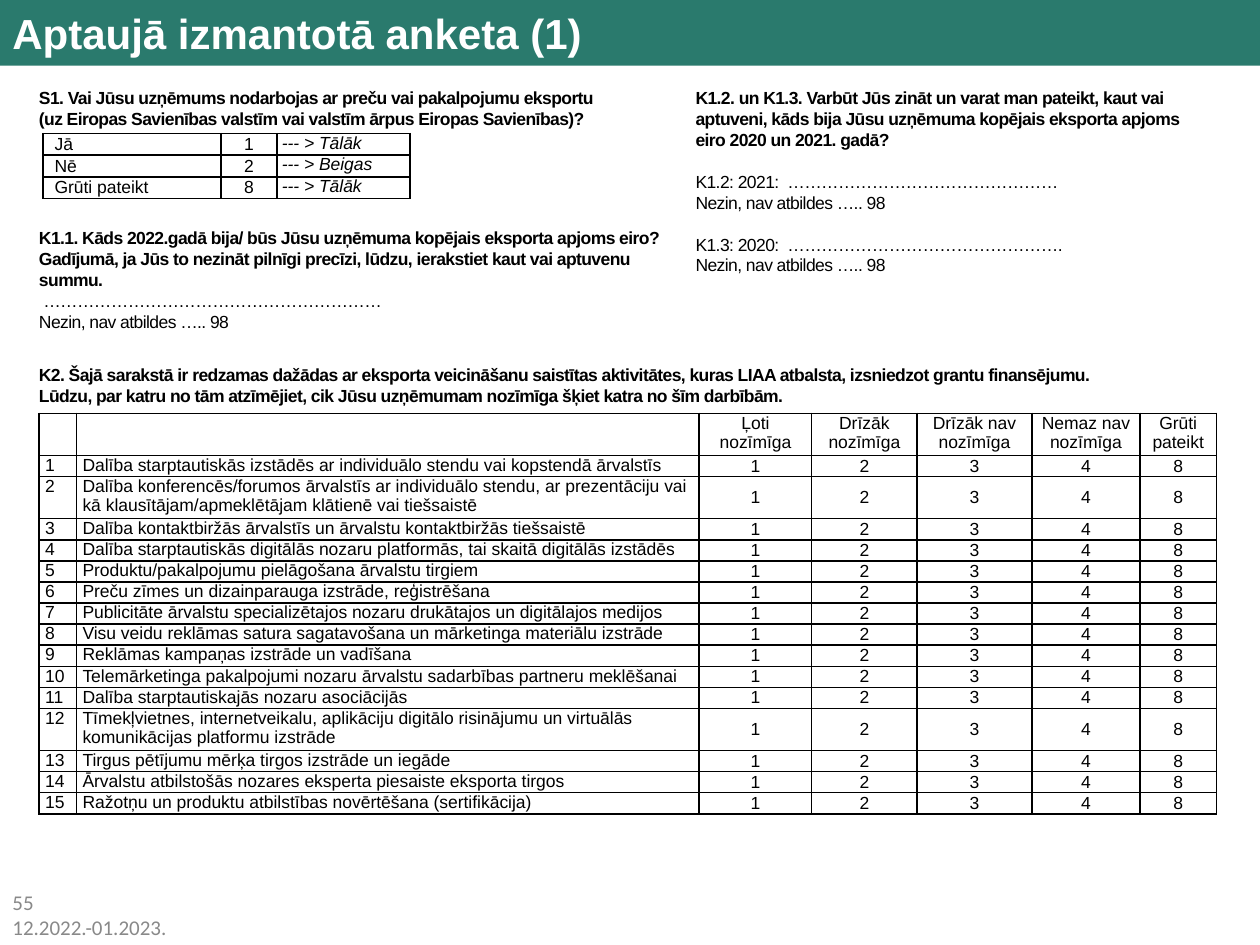
import pptx
import pptx.dml.color
import pptx.enum.shapes
import pptx.enum.text
import pptx.oxml
import pptx.oxml.ns
import pptx.util

Pt = pptx.util.Pt
ALIGN = pptx.enum.text.PP_ALIGN
ANCHOR = pptx.enum.text.MSO_ANCHOR
BLACK, WHITE, GREEN, GREY = "000000", "FFFFFF", "2A7A6D", "898989"

SCREENING = [
    ("Jā", "1", " --- > Tālāk"),
    ("Nē", "2", " --- > Beigas"),
    ("Grūti pateikt", "8", " --- > Tālāk"),
]
RATINGS = [
    ("Ļoti nozīmīga", "1"),
    ("Drīzāk nozīmīga", "2"),
    ("Drīzāk nav nozīmīga", "3"),
    ("Nemaz nav nozīmīga", "4"),
    ("Grūti pateikt", "8"),
]
ACTIVITIES = [
    "Dalība starptautiskās izstādēs ar individuālo stendu vai kopstendā ārvalstīs",
    "Dalība konferencēs/forumos ārvalstīs ar individuālo stendu, ar prezentāciju vai "
    "kā klausītājam/apmeklētājam klātienē vai tiešsaistē",
    "Dalība kontaktbiržās ārvalstīs un ārvalstu kontaktbiržās tiešsaistē",
    "Dalība starptautiskās digitālās nozaru platformās, tai skaitā digitālās izstādēs",
    "Produktu/pakalpojumu pielāgošana ārvalstu tirgiem",
    "Preču zīmes un dizainparauga izstrāde, reģistrēšana",
    "Publicitāte ārvalstu specializētajos nozaru drukātajos un digitālajos medijos",
    "Visu veidu reklāmas satura sagatavošana un mārketinga materiālu izstrāde",
    "Reklāmas kampaņas izstrāde un vadīšana",
    "Telemārketinga pakalpojumi nozaru ārvalstu sadarbības partneru meklēšanai",
    "Dalība starptautiskajās nozaru asociācijās",
    "Tīmekļvietnes, internetveikalu, aplikāciju digitālo risinājumu un virtuālās "
    "komunikācijas platformu izstrāde",
    "Tirgus pētījumu mērķa tirgos izstrāde un iegāde",
    "Ārvalstu atbilstošās nozares eksperta piesaiste eksporta tirgos",
    "Ražotņu un produktu atbilstības novērtēšana (sertifikācija)",
]
LINE_HEIGHT = 12
TWO_LINE_ROWS = (0, 2, 12)
NO_ANSWER = "Nezin, nav atbildes ….. 98"


def rgb(color):
    return pptx.dml.color.RGBColor.from_string(color)


def add_run(p, text, size=10, color=BLACK, bold=False, italic=False, font="Arial"):
    r = p.add_run()
    r.text = text
    r.font.size = Pt(size)
    r.font.name = font
    r.font.bold = bold
    r.font.italic = italic
    r.font.color.rgb = rgb(color)
    return r


def add_text_box(slide, left, top, width, height):
    tf = slide.shapes.add_textbox(Pt(left), Pt(top), Pt(width), Pt(height)).text_frame
    tf.word_wrap = True
    return tf


def add_question(slide, left, top, width, height, paragraphs):
    tf = add_text_box(slide, left, top, width, height)
    for i, (text, bold, gap) in enumerate(paragraphs):
        p = tf.add_paragraph() if i else tf.paragraphs[0]
        p.line_spacing = Pt(LINE_HEIGHT)
        p.space_before = Pt(gap)
        r = add_run(p, text, bold=bold)
        r.font._element.set("spc", "-30")


def add_title(slide, text):
    sp = slide.shapes.add_shape(
        pptx.enum.shapes.MSO_SHAPE.RECTANGLE, 0, 0, Pt(720), Pt(37.5))
    sp.shadow.inherit = False
    sp.fill.solid()
    sp.fill.fore_color.rgb = rgb(GREEN)
    sp.line.fill.background()
    tf = sp.text_frame
    tf.word_wrap = True
    tf.vertical_anchor = ANCHOR.MIDDLE
    p = tf.paragraphs[0]
    p.alignment = ALIGN.LEFT
    add_run(p, text, 24, WHITE, bold=True)


def add_footer(slide, lines):
    tf = add_text_box(slide, 0, 504.7, 106.6, 35.3)
    for i, text in enumerate(lines):
        p = tf.add_paragraph() if i else tf.paragraphs[0]
        add_run(p, text, 12, GREY, font="Calibri")


def add_grid(slide, left, top, widths, heights):
    frame = slide.shapes.add_table(
        len(heights), len(widths), Pt(left), Pt(top), Pt(sum(widths)), Pt(sum(heights)))
    table = frame.table
    table.first_row = table.horz_banding = False
    for column, width in zip(table.columns, widths):
        column.width = Pt(width)
    for row, height in zip(table.rows, heights):
        row.height = Pt(height)
    return table


def fill_cell(cell, text, margin=3.6, center=False, middle=False, italic=False):
    cell.margin_left = cell.margin_right = Pt(margin)
    cell.margin_top = cell.margin_bottom = 0
    cell.vertical_anchor = ANCHOR.MIDDLE if middle else ANCHOR.TOP
    tc_pr = cell._tc.get_or_add_tcPr()
    for side in ("lnL", "lnR", "lnT", "lnB"):
        tc_pr.append(pptx.oxml.parse_xml(
            f'<a:{side} {pptx.oxml.ns.nsdecls("a")} w="{Pt(1)}"><a:solidFill>'
            f'<a:srgbClr val="{BLACK}"/></a:solidFill></a:{side}>'))
    cell.fill.background()
    p = cell.text_frame.paragraphs[0]
    p.alignment = ALIGN.CENTER if center else ALIGN.LEFT
    if text:
        add_run(p, text, italic=italic)


def add_screening_table(slide):
    table = add_grid(slide, 24.7, 76.3, [101.7, 31.9, 76.1], [12.4] * len(SCREENING))
    for i, (answer, code, route) in enumerate(SCREENING):
        fill_cell(table.cell(i, 0), answer, margin=6.5, middle=True)
        fill_cell(table.cell(i, 1), code, margin=0, center=True, middle=True)
        fill_cell(table.cell(i, 2), route, margin=0, italic=True)


def add_rating_table(slide):
    heights = [LINE_HEIGHT * (2 if i in TWO_LINE_ROWS else 1)
               for i in range(len(ACTIVITIES) + 1)]
    widths = [21.4, 356, 64.3, 60.2, 65.6, 61.8, 43.7]
    table = add_grid(slide, 22.2, 236.2, widths, heights)
    fill_cell(table.cell(0, 0), "")
    fill_cell(table.cell(0, 1), "")
    for j, (label, code) in enumerate(RATINGS, 2):
        fill_cell(table.cell(0, j), label, center=True)
        for i in range(1, len(heights)):
            fill_cell(table.cell(i, j), code, center=True, middle=True)
    for i, activity in enumerate(ACTIVITIES, 1):
        fill_cell(table.cell(i, 0), str(i))
        fill_cell(table.cell(i, 1), activity)


def main():
    prs = pptx.Presentation()
    prs.slide_width, prs.slide_height = Pt(720), Pt(540)
    slide = prs.slides.add_slide(prs.slide_layouts[6])
    add_footer(slide, ["55", "12.2022.-01.2023."])
    add_question(slide, 15.2, 46, 338, 31.5, [
        ("S1. Vai Jūsu uzņēmums nodarbojas ar preču vai pakalpojumu eksportu "
         "(uz Eiropas Savienības valstīm vai valstīm ārpus Eiropas Savienības)?", True, 0),
    ])
    add_title(slide, "Aptaujā izmantotā anketa (1)")
    add_screening_table(slide)
    add_question(slide, 15.2, 126, 375, 67.5, [
        ("K1.1. Kāds 2022.gadā bija/ būs Jūsu uzņēmuma kopējais eksporta apjoms eiro?", True, 0),
        ("Gadījumā, ja Jūs to nezināt pilnīgi precīzi, lūdzu, ierakstiet kaut vai "
         "aptuvenu summu.", True, 0),
        (" ……………………………………………………", False, 0),
        (NO_ANSWER, False, 0),
    ])
    add_question(slide, 390.4, 46, 304.6, 128, [
        ("K1.2. un K1.3. Varbūt Jūs zināt un varat man pateikt, kaut vai aptuveni, kāds "
         "bija Jūsu uzņēmuma kopējais eksporta apjoms eiro 2020 un 2021. gadā?", True, 0),
        ("K1.2: 2021:  …………………………………………", False, LINE_HEIGHT),
        (NO_ANSWER, False, 0),
        ("K1.3: 2020:  ………………………………………….", False, LINE_HEIGHT),
        (NO_ANSWER, False, 0),
    ])
    add_question(slide, 15.2, 204.5, 645, 31.5, [
        ("K2. Šajā sarakstā ir redzamas dažādas ar eksporta veicināšanu saistītas "
         "aktivitātes, kuras LIAA atbalsta, izsniedzot grantu finansējumu. Lūdzu, par katru "
         "no tām atzīmējiet, cik Jūsu uzņēmumam nozīmīga šķiet katra no šīm darbībām.", True, 0),
    ])
    add_rating_table(slide)
    prs.save("out.pptx")


if __name__ == "__main__":
    main()
